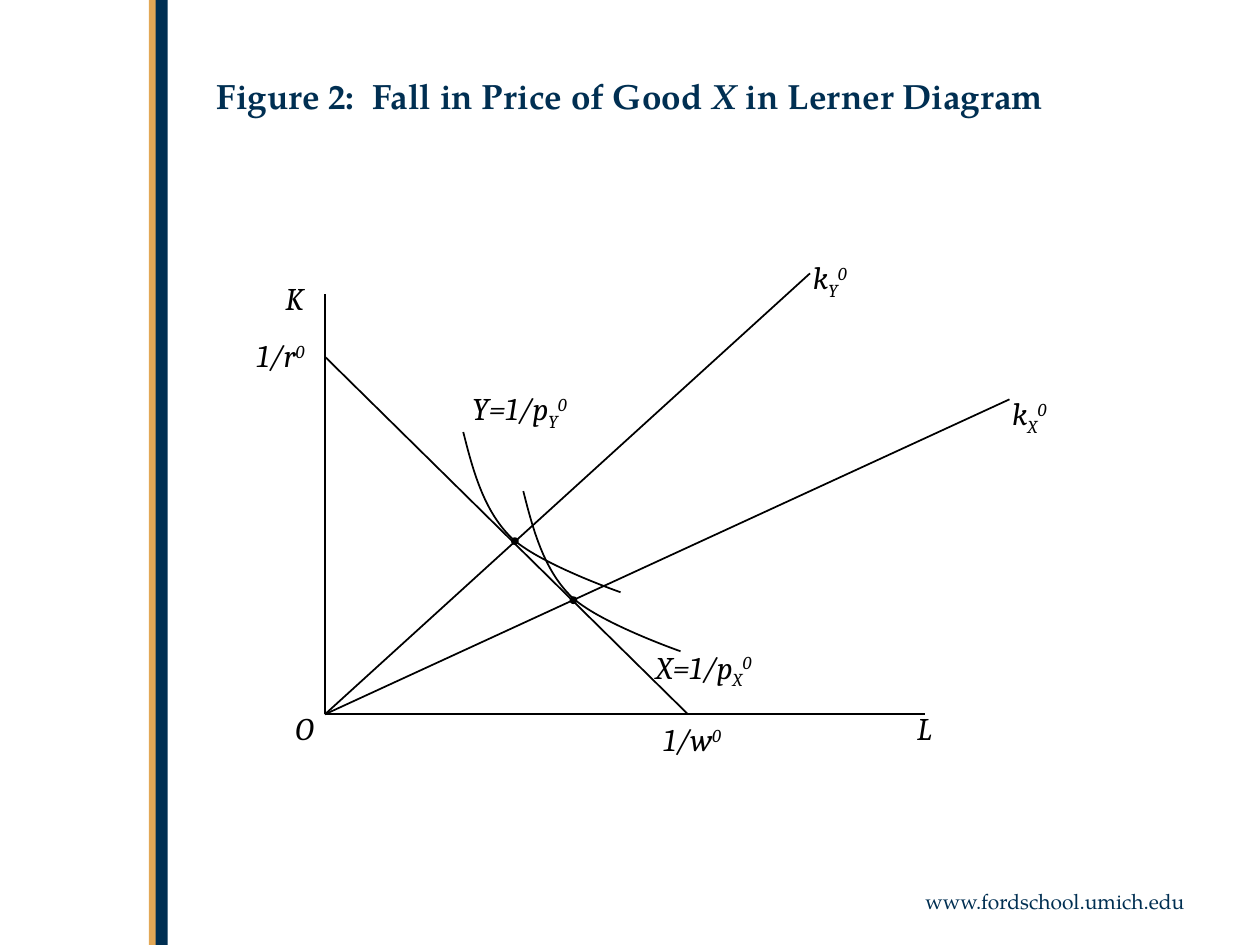
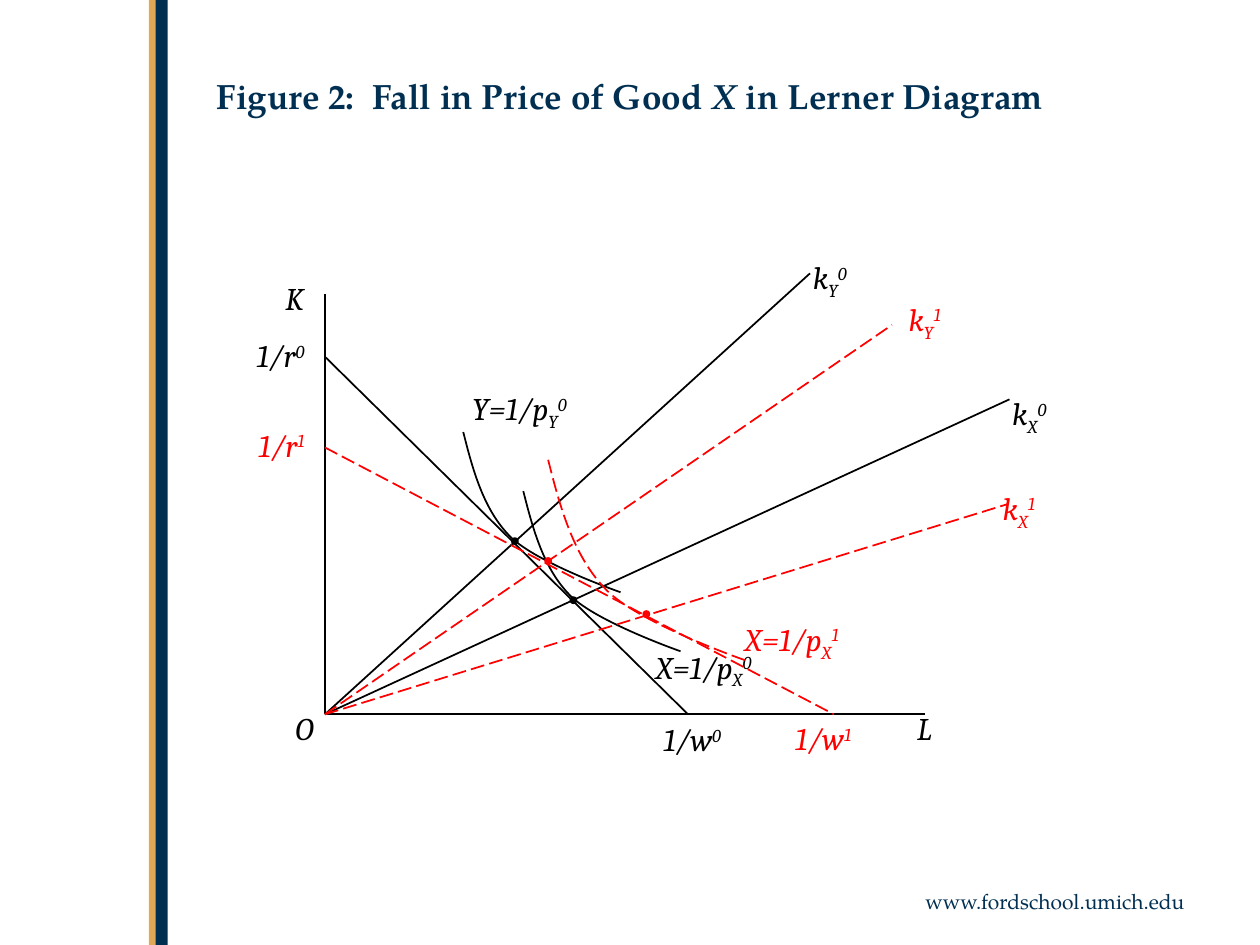
from dataclasses import dataclass

from lxml.etree import SubElement
from pptx import Presentation
from pptx.dml.color import RGBColor
from pptx.enum.dml import MSO_LINE
from pptx.enum.shapes import MSO_CONNECTOR, MSO_SHAPE
from pptx.enum.text import MSO_ANCHOR, MSO_AUTO_SIZE, PP_ALIGN
from pptx.oxml.ns import qn
from pptx.util import Cm, Pt


@dataclass(frozen=True)
class Theme:
    navy: RGBColor = RGBColor(0x00, 0x2F, 0x52)
    gold: RGBColor = RGBColor(0xE3, 0xA8, 0x56)
    initial: RGBColor = RGBColor(0x00, 0x00, 0x00)
    shifted: RGBColor = RGBColor(0xFF, 0x00, 0x00)
    text_font: str = "TeX Gyre Pagella"
    math_font: str = "Cambria"
    title_size: Pt = Pt(20)
    label_size: Pt = Pt(18)
    footer_size: Pt = Pt(12)
    line_width: Pt = Pt(1)
    dot_outline: Pt = Pt(0.75)


PAGE_WIDTH, PAGE_HEIGHT = 25.4, 19.05
ORIGIN = (6.55, 14.4)
SYMBOL_BOX = (2.12, 1.06)
EQUATION_BOX = (3.53, 1.02)
DOT_DIAMETER = 0.13
ISOQUANT = [(0.2, 0.8), (0.42, 1.58), (0.95, 2.11),
            (1.48, 2.64), (3.17, 3.23), (3.17, 3.23)]
TITLE = [("Figure 2:  Fall in Price of Good ", False),
         ("X ", True),
         ("in Lerner Diagram", False)]


@dataclass(frozen=True)
class Equilibrium:
    color: RGBColor
    dashed: bool
    ray_ends: list
    unit_cost: tuple
    isoquants: list
    tangencies: list
    symbols: list
    equations: list


class LernerDeck:
    def __init__(self, theme):
        self.theme = theme
        self.presentation = Presentation()
        self.presentation.slide_width = Cm(PAGE_WIDTH)
        self.presentation.slide_height = Cm(PAGE_HEIGHT)
        self.slide = None

    def start_slide(self):
        layout = self.presentation.slide_layouts[5]
        self.slide = self.presentation.slides.add_slide(layout)
        self.band(3.12, 0.26, self.theme.navy)
        self.band(3.0, 0.14, self.theme.gold)
        self.footer("www.fordschool.umich.edu")
        self.title(TITLE)

    def band(self, left, width, color):
        band = self.slide.shapes.add_shape(
            MSO_SHAPE.RECTANGLE, Cm(left), 0, Cm(width), Cm(PAGE_HEIGHT))
        band.shadow.inherit = False
        band.fill.solid()
        band.fill.fore_color.rgb = color
        band.line.fill.background()

    def styled_run(self, paragraph, text, font_name, size, color):
        run = paragraph.add_run()
        run.text = text
        run.font.name = font_name
        run.font.size = size
        run.font.color.rgb = color
        return run

    def title(self, parts):
        title = self.slide.shapes.title
        title.left, title.top = Cm(1.27), Cm(1.37)
        title.width, title.height = Cm(22.86), Cm(3.18)
        frame = title.text_frame
        frame.vertical_anchor = MSO_ANCHOR.TOP
        frame.auto_size = MSO_AUTO_SIZE.NONE
        paragraph = frame.paragraphs[0]
        paragraph.alignment = PP_ALIGN.CENTER
        for text, italic in parts:
            run = self.styled_run(paragraph, text, self.theme.text_font,
                                  self.theme.title_size, self.theme.navy)
            run.font.bold = True
            run.font.italic = italic

    def text_box(self, position, size, alignment):
        box = self.slide.shapes.add_textbox(*map(Cm, position + size))
        box.text_frame.word_wrap = True
        box.text_frame.auto_size = MSO_AUTO_SIZE.SHAPE_TO_FIT_TEXT
        paragraph = box.text_frame.paragraphs[0]
        paragraph.alignment = alignment
        return paragraph

    def footer(self, address):
        paragraph = self.text_box((17.78, 17.78), (6.35, 0.76), PP_ALIGN.RIGHT)
        self.styled_run(paragraph, address, self.theme.text_font,
                        self.theme.footer_size, self.theme.navy)

    def label(self, position, size, color, base, sub="", sup=""):
        paragraph = self.text_box(position, size, PP_ALIGN.CENTER)
        for text, shift in ((base, 0), (sub, -25000), (sup, 30000)):
            if not text:
                continue
            run = self.styled_run(paragraph, text, self.theme.math_font,
                                  self.theme.label_size, color)
            run.font.italic = True
            if shift:
                run._r.get_or_add_rPr().set("baseline", str(shift))

    def stroke(self, line, color, dashed):
        line.color.rgb = color
        line.width = self.theme.line_width
        if dashed:
            line.dash_style = MSO_LINE.LONG_DASH

    def line(self, start, end, color, dashed=False):
        connector = self.slide.shapes.add_connector(
            MSO_CONNECTOR.STRAIGHT, *map(Cm, start + end))
        self.stroke(connector.line, color, dashed)
        SubElement(connector._element.spPr, qn("a:effectLst"))

    def isoquant(self, start, scale, color, dashed):
        left, top = start
        builder = self.slide.shapes.build_freeform(Cm(left), Cm(top))
        builder.add_line_segments(
            [(Cm(left + scale * x), Cm(top + scale * y)) for x, y in ISOQUANT],
            close=False)
        curve = builder.convert_to_shape()
        segments = list(curve._element.iter(qn("a:lnTo")))
        outline = segments[0].getparent()
        for first in range(0, len(segments), 3):
            bezier = SubElement(outline, qn("a:cubicBezTo"))
            for segment in segments[first:first + 3]:
                bezier.append(segment[0])
                outline.remove(segment)
        curve.shadow.inherit = False
        curve.fill.background()
        self.stroke(curve.line, color, dashed)

    def tangency(self, center, color):
        x, y = center
        dot = self.slide.shapes.add_shape(
            MSO_SHAPE.OVAL, Cm(x - DOT_DIAMETER / 2), Cm(y - DOT_DIAMETER / 2),
            Cm(DOT_DIAMETER), Cm(DOT_DIAMETER))
        dot.shadow.inherit = False
        dot.fill.solid()
        dot.fill.fore_color.rgb = color
        dot.line.color.rgb = color
        dot.line.width = self.theme.dot_outline

    def axes(self):
        color = self.theme.initial
        self.line(ORIGIN, (18.64, ORIGIN[1]), color)
        self.line(ORIGIN, (ORIGIN[0], 5.92), color)
        for name, position in (("O", (5.08, 14.17)), ("L", (17.58, 14.17)),
                               ("K", (4.88, 5.51))):
            self.label(position, SYMBOL_BOX, color, name)

    def equilibrium(self, state):
        color, dashed = state.color, state.dashed
        for end in state.ray_ends:
            self.line(ORIGIN, end, color, dashed)
        capital_intercept, labor_intercept = state.unit_cost
        self.line((ORIGIN[0], capital_intercept),
                  (labor_intercept, ORIGIN[1]), color, dashed)
        for start, scale in state.isoquants:
            self.isoquant(start, scale, color, dashed)
        for center in state.tangencies:
            self.tangency(center, color)
        for position, *parts in state.symbols:
            self.label(position, SYMBOL_BOX, color, *parts)
        for position, *parts in state.equations:
            self.label(position, EQUATION_BOX, color, *parts)


def main():
    theme = Theme()
    before = Equilibrium(
        color=theme.initial,
        dashed=False,
        ray_ends=[(20.35, 8.05), (16.33, 5.51)],
        unit_cost=(7.19, 13.87),
        isoquants=[((9.34, 8.71), 1), ((10.55, 9.9), 1)],
        tangencies=[(10.38, 10.91), (11.56, 12.1)],
        symbols=[((15.67, 5.08), "k", "Y", "0"),
                 ((19.69, 7.82), "k", "X", "0")],
        equations=[((8.71, 7.72), "Y=1/p", "Y", "0"),
                   ((12.42, 12.93), "X=1/p", "X", "0"),
                   ((12.19, 14.4), "1/w", "", "0"),
                   ((3.89, 6.65), "1/r", "", "0")])
    after = Equilibrium(
        color=theme.shifted,
        dashed=True,
        ray_ends=[(17.98, 6.55), (20.32, 10.16)],
        unit_cost=(9.02, 16.81),
        isoquants=[((11.05, 9.27), 1.25)],
        tangencies=[(13.03, 12.38), (11.05, 11.31)],
        symbols=[((17.58, 5.92), "k", "Y", "1"),
                 ((19.48, 9.73), "k", "X", "1")],
        equations=[((14.2, 12.37), "X=1/p", "X", "1"),
                   ((3.91, 8.46), "1/r", "", "1"),
                   ((14.83, 14.38), "1/w", "", "1")])

    deck = LernerDeck(theme)
    for states in ([before], [before, after]):
        deck.start_slide()
        deck.axes()
        for state in states:
            deck.equilibrium(state)
    deck.presentation.save("out.pptx")


if __name__ == "__main__":
    main()
